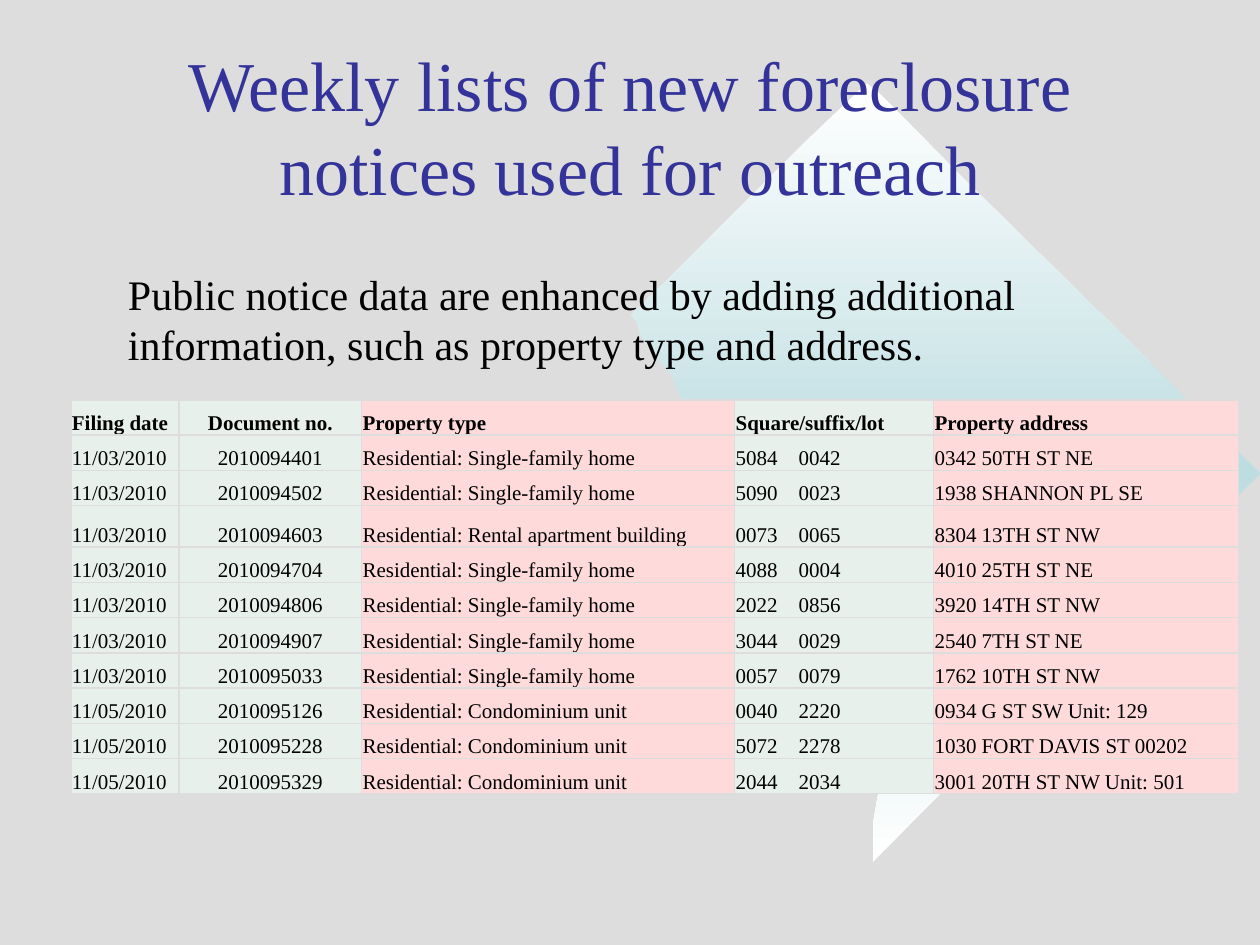
"""Build a slide on weekly foreclosure notices with a map backdrop and a table."""
from copy import deepcopy
from lxml import etree
from pptx import Presentation
from pptx import util as u
from pptx.dml import color
from pptx.enum import text
from pptx.oxml import ns

HUES = {"back": "DDDDDD", "title": "333399", "ink": "000000", "teal": "BDDDE1",
        "white": "FFFFFF", "green": "E8F0EC", "pink": "FEDBDA"}
FONT = "Times New Roman"
ROWS = [
    ("Filing date", "Document no.", "Property type", "Square/suffix/lot", "Property address"),
    ("11/03/2010", "2010094401", "Single-family home", "5084\t0042", "0342 50TH ST NE"),
    ("11/03/2010", "2010094502", "Single-family home", "5090\t0023", "1938 SHANNON PL SE"),
    ("11/03/2010", "2010094603", "Rental apartment building", "0073\t0065", "8304 13TH ST NW"),
    ("11/03/2010", "2010094704", "Single-family home", "4088\t0004", "4010 25TH ST NE"),
    ("11/03/2010", "2010094806", "Single-family home", "2022\t0856", "3920 14TH ST NW"),
    ("11/03/2010", "2010094907", "Single-family home", "3044\t0029", "2540 7TH ST NE"),
    ("11/03/2010", "2010095033", "Single-family home", "0057\t0079", "1762 10TH ST NW"),
    ("11/05/2010", "2010095126", "Condominium unit", "0040\t2220", "0934 G ST SW Unit: 129"),
    ("11/05/2010", "2010095228", "Condominium unit", "5072\t2278", "1030 FORT DAVIS ST 00202"),
    ("11/05/2010", "2010095329", "Condominium unit", "2044\t2034", "3001 20TH ST NW Unit: 501"),
]
WIDE = [2.18, 3.68, 7.52, 4.01, 6.15]
TINTS = ["green", "green", "pink", "green", "pink"]
MAP = [(688, 66), (697, 73), (765, 142), (886, 261), (1000, 376), (964, 411), (895, 480),
       (839, 536), (790, 586), (748, 628), (693, 684), (693, 653), (700, 613), (695, 611),
       (692, 593), (689, 592), (689, 587), (693, 585), (695, 571), (692, 560), (687, 556),
       (682, 557), (679, 553), (676, 533), (686, 536), (707, 531), (710, 505), (695, 470),
       (684, 465), (692, 463), (693, 458), (689, 442), (678, 430), (675, 431), (677, 436),
       (675, 442), (669, 443), (664, 436), (664, 430), (657, 418), (654, 415), (647, 415),
       (640, 401), (632, 380), (626, 357), (619, 352), (601, 349), (590, 349), (571, 342),
       (563, 337), (540, 315), (533, 297), (516, 278), (508, 265), (506, 256), (501, 250),
       (507, 244), (542, 210), (590, 162), (643, 109)]


def write(frame, words, size, hue, align=text.PP_ALIGN.LEFT, bold=False):
    para = frame.paragraphs[0]
    para.alignment = align
    run = para.add_run()
    run.text = words
    font = run.font
    font.name, font.size, font.bold = FONT, u.Pt(size), bold
    font.color.rgb = color.RGBColor.from_string(HUES[hue])
    return para


def edge(cell):
    props = cell._tc.get_or_add_tcPr()
    for spot, side in enumerate(("lnL", "lnR", "lnT", "lnB")):
        line = etree.Element(ns.qn("a:" + side), w=str(u.Pt(1)))
        fill = etree.SubElement(line, ns.qn("a:solidFill"))
        etree.SubElement(fill, ns.qn("a:srgbClr"), val=HUES["back"])
        props.insert(spot, line)


deck = Presentation()
deck.slide_width, deck.slide_height = u.Cm(25.4), u.Cm(19.05)
slide = deck.slides.add_slide(deck.slide_layouts[6])
slide.background.fill.solid()
slide.background.fill.fore_color.rgb = color.RGBColor.from_string(HUES["back"])

pen = slide.shapes.build_freeform(*MAP[0], scale=u.Cm(2.54) / 100)
pen.add_line_segments(MAP[1:], close=True)
land = pen.convert_to_shape()
land.shadow.inherit = False
land.line.fill.background()
land.fill.gradient()
land.fill.gradient_angle = 270
stops = land.fill._fill._gradFill.gsLst
stops.append(deepcopy(stops[0]))
for stop, place, hue in zip(land.fill.gradient_stops, (0, 0.5, 1), ("white", "teal", "white")):
    stop.position = place
    stop.color.rgb = color.RGBColor.from_string(HUES[hue])

head = slide.shapes.add_textbox(u.Cm(1.9), u.Cm(1.27), u.Cm(21.6), u.Cm(2.54)).text_frame
head.word_wrap = True
head.vertical_anchor = text.MSO_ANCHOR.MIDDLE
write(head, "Weekly lists of new foreclosure notices used for outreach", 40, "title",
      text.PP_ALIGN.CENTER)

grid = slide.shapes.add_table(len(ROWS), len(WIDE), u.Cm(1.43), u.Cm(8.06),
                              u.Cm(sum(WIDE)), u.Cm(7.95)).table
grid.first_row = grid.horz_banding = False
for col, wide in zip(grid.columns, WIDE):
    col.width = u.Cm(wide)
for r, row in enumerate(ROWS):
    grid.rows[r].height = u.Cm(0.84 if r == 3 else 0.71)
    for c, words in enumerate(row):
        cell = grid.cell(r, c)
        cell.margin_left = cell.margin_right = cell.margin_top = u.Cm(0.02)
        cell.margin_bottom = 0
        cell.vertical_anchor = text.MSO_ANCHOR.BOTTOM
        cell.fill.solid()
        cell.fill.fore_color.rgb = color.RGBColor.from_string(HUES[TINTS[c]])
        edge(cell)
        if r and c == 2:
            words = "Residential: " + words
        align = text.PP_ALIGN.CENTER if c == 1 else text.PP_ALIGN.LEFT
        para = write(cell.text_frame, words, 12, "ink", align, r == 0)
        if "\t" in words:
            tabs = etree.SubElement(para._p.get_or_add_pPr(), ns.qn("a:tabLst"))
            etree.SubElement(tabs, ns.qn("a:tab"), pos=str(u.Cm(1.27)), algn="l")

note = slide.shapes.add_textbox(u.Cm(2.33), u.Cm(5.29), u.Cm(20.96), u.Cm(2.31)).text_frame
note.word_wrap = True
note.auto_size = text.MSO_AUTO_SIZE.SHAPE_TO_FIT_TEXT
write(note, "Public notice data are enhanced by adding additional information, "
      "such as property type and address.", 24, "ink")

deck.save("out.pptx")
